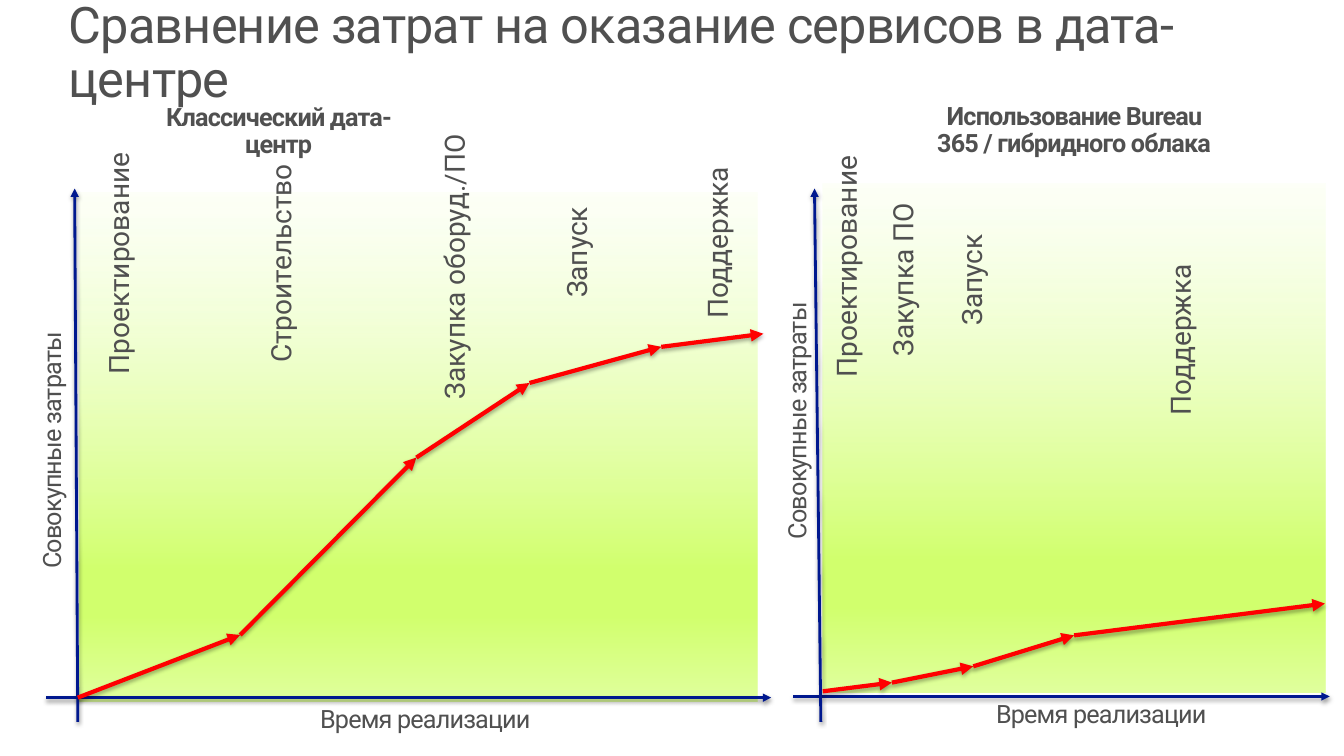
from itertools import pairwise

from lxml.etree import SubElement
from pptx import Presentation
from pptx.dml.color import RGBColor
from pptx.enum.shapes import MSO_CONNECTOR, MSO_SHAPE
from pptx.enum.text import MSO_ANCHOR, PP_ALIGN
from pptx.oxml.ns import qn
from pptx.util import Cm, Pt

TITLE = "Сравнение затрат на оказание сервисов в дата-центре"
TIME_LABEL = "Время реализации"
COST_LABEL = "Совокупные затраты"

# All positions are in centimetres; label positions are box centres.
PANELS = [
    {
        "header": ("Классический дата-центр", (7.02, 3.02)),
        "background": (2.01, 4.85, 17.07, 12.83),
        "time_axis": [(1.17, 17.58), (19.43, 17.58)],
        "cost_axis": [(1.96, 18.19), (1.88, 4.75)],
        "time_label": (11.16, 18.19),
        "cost_label": (1.3, 10.8),
        "cost_points": [(1.96, 17.58), (6.05, 16), (10.49, 11.53),
                        (13.34, 9.65), (16.66, 8.74), (19.23, 8.41)],
        "stages": [
            ("Проектирование", (3.07, 6.64)),
            ("Строительство", (7.16, 6.64)),
            ("Закупка оборуд./ПО", (11.53, 6.72)),
            ("Запуск", (14.61, 6.36)),
            ("Поддержка", (18.16, 6.11)),
        ],
    },
    {
        "header": ("Использование Bureau 365 / гибридного облака", (27.06, 3)),
        "background": (20.73, 4.62, 12.67, 12.83),
        "time_axis": [(19.99, 17.55), (33.5, 17.55)],
        "cost_axis": [(20.68, 18.19), (20.52, 4.75)],
        "time_label": (28.19, 18.06),
        "cost_label": (20.07, 10.05),
        "cost_points": [(20.73, 17.42), (22.47, 17.2), (24.52, 16.79),
                        (27.06, 16.01), (33.38, 15.21)],
        "stages": [
            ("Проектирование", (21.41, 6.72)),
            ("Закупка ПО", (22.83, 7.05)),
            ("Запуск", (24.56, 7.05)),
            ("Поддержка", (29.82, 8.57)),
        ],
    },
]

# Position in percent, colour, opacity in percent
GRADIENT = [(0, "FAFFEF", 46), (74, "D1FF6D", 100),
            (83, "D1FF6D", 100), (100, "E0FF9E", 100)]
AXIS = {"color": "00188F", "width": 2, "shadow_opacity": 38, "shadow_distance": 1.6}
COST = {"color": "FF0000", "width": 3, "shadow_opacity": 35, "shadow_distance": 1.8}

TIGHT = {"line_spacing": 0.9, "letter_spacing": -60}
TITLE_STYLE = {**TIGHT, "size": (31.67, 1.24), "font": {"size": Pt(36)},
               "margins": (1.07, 0.43, 0.15, 0.15), "anchor": MSO_ANCHOR.MIDDLE}
HEADER_STYLE = {**TIGHT, "size": (7.75, 1.02), "align": PP_ALIGN.CENTER,
                "font": {"size": Pt(18), "bold": True}}
TIME_STYLE = {**TIGHT, "size": (6.69, 1.02), "font": {"size": Pt(18)}}
COST_STYLE = {**TIGHT, "size": (7.57, 0.87), "font": {"size": Pt(18)}, "rotation": 270}
STAGE_STYLE = {"size": (7.32, 1.55), "font": {"size": Pt(20)}, "rotation": 270,
               "align": PP_ALIGN.CENTER, "margins": (0.25, 0.25, 0.25, 0.25)}


def color(hex_value):
    return RGBColor.from_string(hex_value)


def add_color(parent, hex_value, opacity):
    element = SubElement(parent, qn("a:srgbClr"), val=hex_value)
    if opacity < 100:
        SubElement(element, qn("a:alpha"), val=str(opacity * 1000))


def add_label(slide, text, center, style):
    """Place a text box by its centre, so that rotation keeps its position."""
    width, height = style["size"]
    box = slide.shapes.add_textbox(Cm(center[0] - width / 2), Cm(center[1] - height / 2),
                                   Cm(width), Cm(height))
    box.rotation = style.get("rotation", 0)
    frame = box.text_frame
    frame.word_wrap = True
    frame.vertical_anchor = style.get("anchor", MSO_ANCHOR.TOP)
    margins = style.get("margins", (0.25, 0.13, 0.25, 0.13))
    for side, margin in zip(("left", "top", "right", "bottom"), margins):
        setattr(frame, f"margin_{side}", Cm(margin))
    paragraph = frame.paragraphs[0]
    paragraph.alignment = style.get("align", PP_ALIGN.LEFT)
    paragraph.line_spacing = style.get("line_spacing", 1.0)
    run = paragraph.add_run()
    run.text = text
    for name, value in {"name": "Roboto", **style["font"]}.items():
        setattr(run.font, name, value)
    run.font.color.rgb = color("505050")
    run._r.get_or_add_rPr().set("spc", str(style.get("letter_spacing", 0)))


def add_background(slide, bounds):
    shape = slide.shapes.add_shape(MSO_SHAPE.RECTANGLE, *map(Cm, bounds))
    shape.shadow.inherit = False
    shape.line.fill.background()
    shape.fill.gradient()
    shape.fill.gradient_angle = 270
    stops = shape._element.spPr.find(qn("a:gradFill")).find(qn("a:gsLst"))
    for stop in list(stops):
        stops.remove(stop)
    for position, hex_value, opacity in GRADIENT:
        stop = SubElement(stops, qn("a:gs"), pos=str(position * 1000))
        add_color(stop, hex_value, opacity)


def add_arrow(slide, start, end, style):
    arrow = slide.shapes.add_connector(MSO_CONNECTOR.STRAIGHT, *map(Cm, (*start, *end)))
    arrow.line.color.rgb = color(style["color"])
    arrow.line.width = Pt(style["width"])
    SubElement(arrow.line._get_or_add_ln(), qn("a:tailEnd"), type="triangle")
    effects = SubElement(arrow._element.spPr, qn("a:effectLst"))
    shadow = SubElement(effects, qn("a:outerShdw"), blurRad=str(Pt(3.1)),
                        dist=str(Pt(style["shadow_distance"])), dir="5400000",
                        rotWithShape="0")
    add_color(shadow, "000000", style["shadow_opacity"])


def add_panel(slide, panel):
    add_background(slide, panel["background"])
    add_arrow(slide, *panel["time_axis"], AXIS)
    add_arrow(slide, *panel["cost_axis"], AXIS)
    add_label(slide, TIME_LABEL, panel["time_label"], TIME_STYLE)
    add_label(slide, COST_LABEL, panel["cost_label"], COST_STYLE)
    for start, end in pairwise(panel["cost_points"]):
        add_arrow(slide, start, end, COST)
    for name, center in panel["stages"]:
        add_label(slide, name, center, STAGE_STYLE)
    add_label(slide, *panel["header"], HEADER_STYLE)


def main():
    presentation = Presentation()
    presentation.slide_width = Cm(33.86)
    presentation.slide_height = Cm(19.05)
    slide = presentation.slides.add_slide(presentation.slide_layouts[6])
    add_label(slide, TITLE, (16.5, 1.23), TITLE_STYLE)
    for panel in PANELS:
        add_panel(slide, panel)
    presentation.save("out.pptx")


if __name__ == "__main__":
    main()
